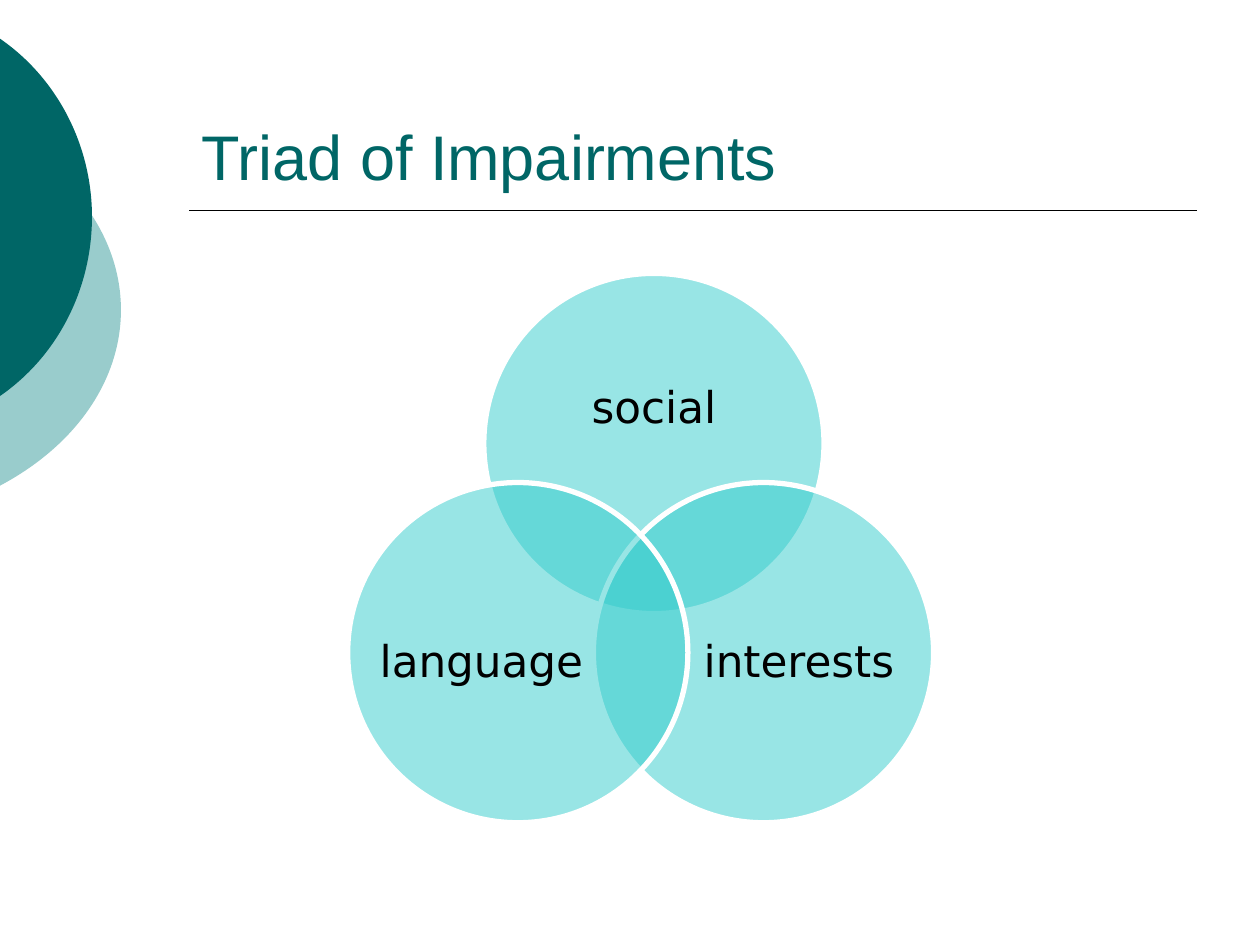
from lxml.etree import SubElement
from pptx import Presentation
from pptx.dml.color import RGBColor
from pptx.enum.shapes import MSO_CONNECTOR, MSO_SHAPE
from pptx.enum.text import MSO_ANCHOR, PP_ALIGN
from pptx.oxml.ns import qn
from pptx.util import Inches, Pt

TEAL = RGBColor(0x00, 0x66, 0x66)
PALE_TEAL = RGBColor(0x99, 0xCC, 0xCC)
TURQUOISE = RGBColor(0x33, 0xCC, 0xCC)
BLACK = RGBColor(0, 0, 0)
WHITE = RGBColor(0xFF, 0xFF, 0xFF)

TITLE = "Triad of Impairments"
# frame of the whole disc, colour, and the visible arc: a start and two curves
EDGE_DISCS = [
    ((-3.54, 0.75, 4.5, 3.42), PALE_TEAL,
     [(-0.01, 1.06),
      (0.6, 1.38), (0.96, 1.9), (0.96, 2.46),
      (0.96, 3.02), (0.6, 3.54), (-0.01, 3.86)]),
    ((-2.65, 0, 3.38, 3.45), TEAL,
     [(-0.01, 0.3),
      (0.46, 0.62), (0.73, 1.16), (0.73, 1.72),
      (0.73, 2.29), (0.46, 2.83), (-0.01, 3.15)]),
]
DIAMETER = 2.7
# label, circle left and top, label box
CIRCLES = [
    ("social", (3.84, 2.17), (4.2, 2.64, 1.98, 1.22)),
    ("interests", (4.71, 3.83), (5.53, 4.52, 1.62, 1.49)),
    ("language", (2.76, 3.83), (3.01, 4.52, 1.62, 1.49)),
]
TITLE_FONT = {"name": "Arial", "size": Pt(36), "bold": False}
LABEL_FONT = {"name": "DejaVu Sans", "size": Pt(25)}


def set_text(tf, text, font, color, align, anchor):
    tf.word_wrap = True
    tf.vertical_anchor = anchor
    p = tf.paragraphs[0]
    p.alignment = align
    r = p.add_run()
    r.text = text
    for key, value in font.items():
        setattr(r.font, key, value)
    r.font.color.rgb = color
    return p


def add_edge_disc(s, frame, color, arc):
    """Frame the whole disc, but outline only the part right of the slide's edge."""
    left, top, width, height = map(Inches, frame)
    builder = s.shapes.build_freeform(left, top)
    builder.add_line_segments([(left + width, top), (left + width, top + height),
                               (left, top + height)])
    sp = builder.convert_to_shape()
    outline = next(sp._element.iter(qn("a:path")))
    for segment in list(outline):
        outline.remove(segment)
    for tag, points in (("a:moveTo", arc[:1]), ("a:cubicBezTo", arc[1:4]),
                        ("a:cubicBezTo", arc[4:])):
        segment = SubElement(outline, qn(tag))
        for x, y in points:
            SubElement(segment, qn("a:pt"), x=str(Inches(x) - left), y=str(Inches(y) - top))
    SubElement(outline, qn("a:close"))
    sp.shadow.inherit = False
    sp.fill.solid()
    sp.fill.fore_color.rgb = color
    sp.line.fill.background()


def add_circle(s, left, top):
    sp = s.shapes.add_shape(MSO_SHAPE.OVAL, *map(Inches, (left, top, DIAMETER, DIAMETER)))
    sp.shadow.inherit = False
    sp.fill.solid()
    sp.fill.fore_color.rgb = TURQUOISE
    color = next(sp._element.spPr.iter(qn("a:srgbClr")))
    SubElement(color, qn("a:alpha"), val="50000")
    sp.line.color.rgb = WHITE
    sp.line.width = Pt(3)


def add_label(s, text, box):
    tf = s.shapes.add_textbox(*map(Inches, box)).text_frame
    for side in ("left", "top", "right", "bottom"):
        setattr(tf, f"margin_{side}", 0)
    p = set_text(tf, text, LABEL_FONT, BLACK, PP_ALIGN.CENTER, MSO_ANCHOR.MIDDLE)
    p.line_spacing = 0.9


def main():
    prs = Presentation()
    prs.slide_width, prs.slide_height = Inches(10), Inches(7.5)
    s = prs.slides.add_slide(prs.slide_layouts[5])

    for disc in EDGE_DISCS:
        add_edge_disc(s, *disc)

    title = s.shapes.title
    title.left, title.top, title.width, title.height = map(Inches, (1.5, 0.33, 8, 1.25))
    set_text(title.text_frame, TITLE, TITLE_FONT, TEAL, PP_ALIGN.LEFT, MSO_ANCHOR.BOTTOM)

    rule = s.shapes.add_connector(MSO_CONNECTOR.STRAIGHT, *map(Inches, (1.5, 1.67, 9.5, 1.67)))
    rule.line.color.rgb = BLACK
    rule.line.width = Pt(1)
    SubElement(rule._element.spPr, qn("a:effectLst"))

    for label, corner, box in CIRCLES:
        add_circle(s, *corner)
        add_label(s, label, box)

    prs.save("out.pptx")


if __name__ == "__main__":
    main()
